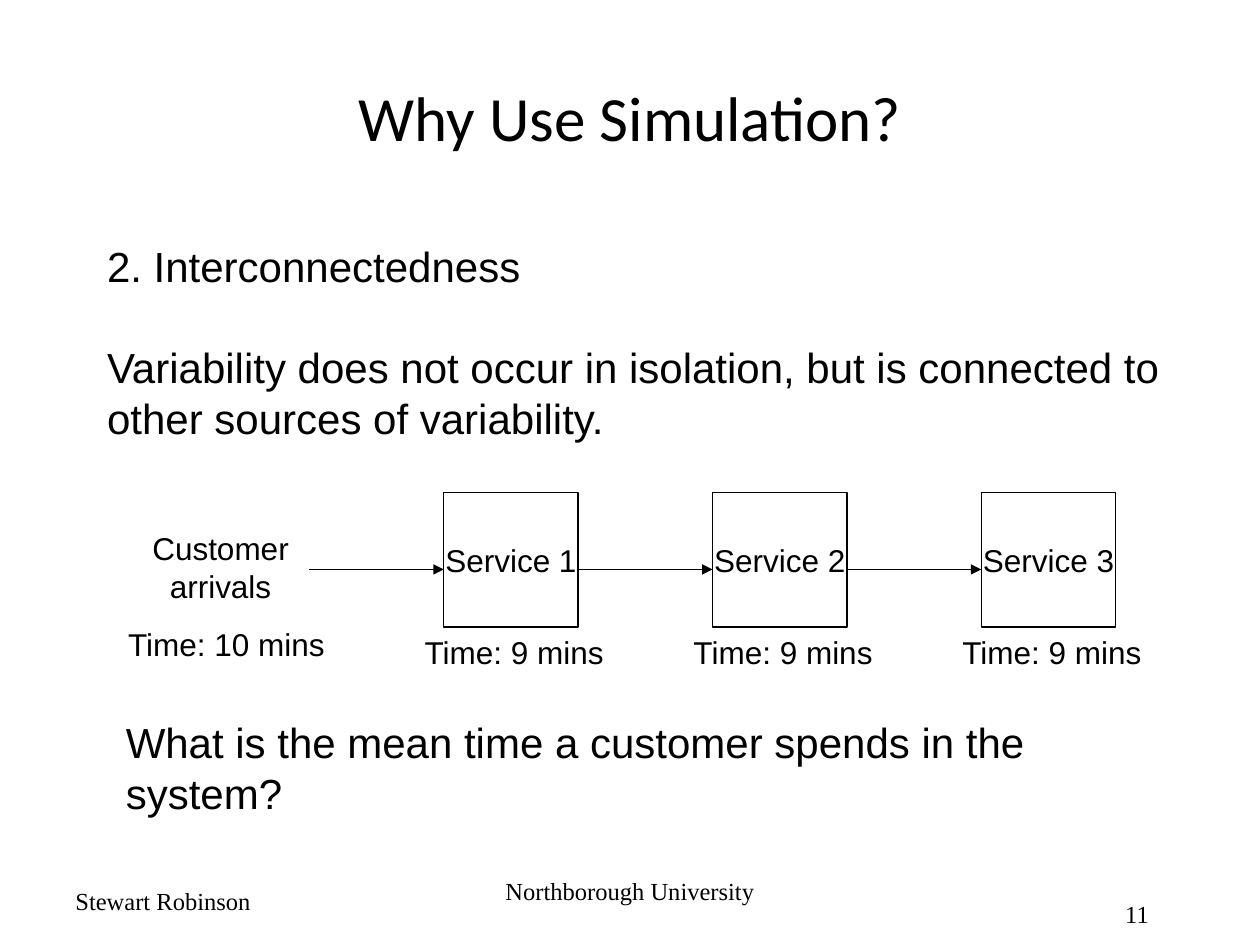
from lxml import etree
from pptx import Presentation
from pptx.dml.color import RGBColor
from pptx.enum import shapes, text
from pptx.oxml.ns import qn
from pptx.util import Pt

BLACK = RGBColor(0, 0, 0)
LEFT, CENTER, RIGHT = text.PP_ALIGN.LEFT, text.PP_ALIGN.CENTER, text.PP_ALIGN.RIGHT
TOP, MIDDLE = text.MSO_ANCHOR.TOP, text.MSO_ANCHOR.MIDDLE

TITLE = "Why Use Simulation?"
POINTS = [
    "2. Interconnectedness",
    "Variability does not occur in isolation, but is connected to "
    "other sources of variability.",
]
ARRIVALS = ["Customer", "arrivals"]
ARRIVAL_TIME = "Time: 10 mins"
SERVICES = [
    ("Service 1", "Time: 9 mins"),
    ("Service 2", "Time: 9 mins"),
    ("Service 3", "Time: 9 mins"),
]
QUESTION = "What is the mean time a customer spends in the system?"
# text, left, top, width, height, alignment, anchor, top margin
FOOTERS = [
    ("Stewart Robinson", 36, 500.4, 168, 28.8, LEFT, MIDDLE, 3.6),
    ("Northborough University", 246, 500.4, 228, 28.8, CENTER, TOP, 0),
    ("11", 513.6, 504, 150, 36, RIGHT, MIDDLE, 3.6),
]

SIDE = 76.8          # service box, and the arrow leading to it
FIRST_LEFT, BOX_TOP = 253.6, 281.6
ARROW_Y = 325.4
TIME_TOP, TIME_WIDTH, TIME_HEIGHT = 358, 118, 28.8


def place(shape, left, top, width, height):
    shape.left, shape.top = Pt(left), Pt(top)
    shape.width, shape.height = Pt(width), Pt(height)


def write(shape, lines, size, font="Arial", align=LEFT, anchor=TOP, wrap=True, gap=0):
    """Fill a shape with one paragraph per line, gap points apart."""
    frame = shape.text_frame
    frame.word_wrap = wrap
    frame.auto_size = text.MSO_AUTO_SIZE.NONE
    frame.vertical_anchor = anchor
    for i, line in enumerate(lines):
        paragraph = frame.add_paragraph() if i else frame.paragraphs[0]
        paragraph.alignment = align
        paragraph.space_before = Pt(gap if i else 0)
        run = paragraph.add_run()
        run.text = line
        run.font.name, run.font.size = font, Pt(size)
        run.font.color.rgb = BLACK


def add_label(slide, lines, left, top, width, height, size, **style):
    label = slide.shapes.add_textbox(Pt(left), Pt(top), Pt(width), Pt(height))
    write(label, lines, size, **style)
    return label


def remove_bullets(body):
    for paragraph in body.text_frame.paragraphs:
        properties = paragraph._p.get_or_add_pPr()
        properties.set("marL", "0")
        properties.set("indent", "0")
        etree.SubElement(properties, qn("a:buNone"))


def add_arrow(slide, start, end, y):
    arrow = slide.shapes.add_connector(
        shapes.MSO_CONNECTOR.STRAIGHT, Pt(start), Pt(y), Pt(end), Pt(y))
    arrow.line.color.rgb = BLACK
    arrow.line.width = Pt(0.75)
    etree.SubElement(arrow.line._get_or_add_ln(), qn("a:tailEnd"), type="triangle")
    etree.SubElement(arrow._element.spPr, qn("a:effectLst"))


def add_service(slide, name, time, left):
    box = slide.shapes.add_shape(
        shapes.MSO_SHAPE.RECTANGLE, Pt(left), Pt(BOX_TOP), Pt(SIDE), Pt(SIDE))
    box.shadow.inherit = False
    box.fill.background()
    box.line.color.rgb = BLACK
    box.line.width = Pt(0.75)
    write(box, [name], 18, align=CENTER, anchor=MIDDLE, wrap=False)
    add_arrow(slide, left - SIDE, left, ARROW_Y)
    add_label(slide, [time], left - 18, TIME_TOP, TIME_WIDTH, TIME_HEIGHT, 18, wrap=False)


def main():
    deck = Presentation()
    deck.slide_width, deck.slide_height = Pt(720), Pt(540)
    slide = deck.slides.add_slide(deck.slide_layouts[1])

    title, body = slide.placeholders
    place(title, 36, 21.6, 648, 90)
    write(title, [TITLE], 36, font="Calibri", align=CENTER, anchor=MIDDLE)
    place(body, 54, 134, 618, 124)
    write(body, POINTS, 24, gap=29)
    remove_bullets(body)

    add_label(slide, ARRIVALS, 76.3, 298.8, 99.4, 51, 18, align=CENTER)
    add_label(slide, [ARRIVAL_TIME], 66.2, 353.5, 128, TIME_HEIGHT, 18, wrap=False)
    for i, (name, time) in enumerate(SERVICES):
        add_service(slide, name, time, FIRST_LEFT + 2 * SIDE * i)

    add_label(slide, [QUESTION], 64.8, 406, 556, 65.5, 24)
    for line, left, top, width, height, align, anchor, margin in FOOTERS:
        footer = add_label(slide, [line], left, top, width, height, 14,
                           font="Times New Roman", align=align, anchor=anchor)
        footer.text_frame.margin_top = Pt(margin)

    deck.save("out.pptx")


if __name__ == "__main__":
    main()
